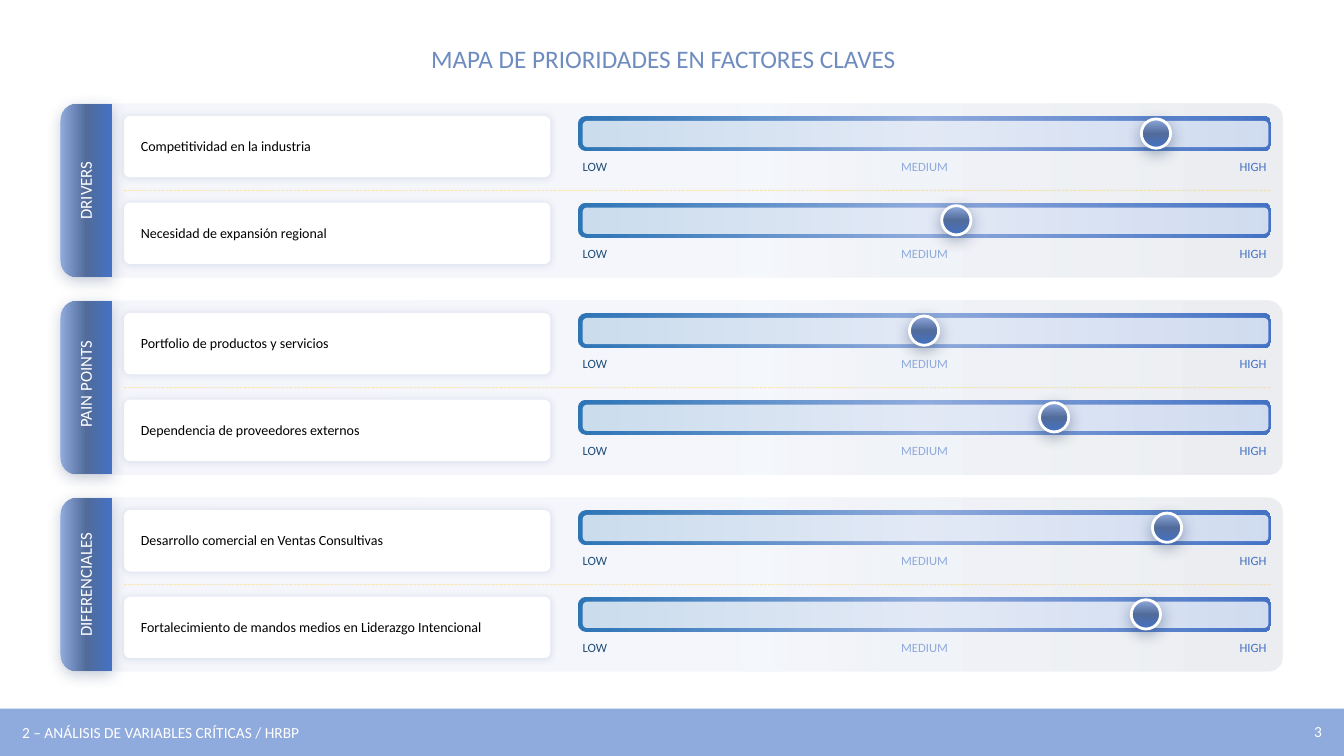
"""Build the slide that maps the priority of key business factors."""
from dataclasses import dataclass
from typing import Any, NamedTuple

from lxml.etree import SubElement
from pptx import Presentation
from pptx.dml.color import RGBColor
from pptx.enum.dml import MSO_LINE
from pptx.enum.shapes import MSO_CONNECTOR, MSO_SHAPE
from pptx.enum.text import MSO_ANCHOR, MSO_AUTO_SIZE, PP_ALIGN
from pptx.oxml.ns import qn
from pptx.util import Inches, Pt

RECT, ROUND = MSO_SHAPE.RECTANGLE, MSO_SHAPE.ROUNDED_RECTANGLE
TAB, OVAL = MSO_SHAPE.ROUND_2_SAME_RECTANGLE, MSO_SHAPE.OVAL
STRAIGHT, DASH = MSO_CONNECTOR.STRAIGHT, MSO_LINE.SQUARE_DOT
LEFT, CENTER, RIGHT = PP_ALIGN.LEFT, PP_ALIGN.CENTER, PP_ALIGN.RIGHT
TOP, MIDDLE = MSO_ANCHOR.TOP, MSO_ANCHOR.MIDDLE
GROW, FIXED = MSO_AUTO_SIZE.SHAPE_TO_FIT_TEXT, MSO_AUTO_SIZE.NONE

WHITE, BLACK = RGBColor(255, 255, 255), RGBColor(0, 0, 0)
SKY, BLUE = RGBColor(0x8F, 0xAA, 0xDC), RGBColor(0x44, 0x72, 0xC4)
STEEL, OCEAN = RGBColor(0x51, 0x6B, 0x9A), RGBColor(0x2E, 0x75, 0xB6)
SLATE, AMBER = RGBColor(0x44, 0x54, 0x6A), RGBColor(0xFF, 0xC0, 0x00)
DEEP, NAVY = RGBColor(0x1F, 0x4E, 0x79), RGBColor(0x20, 0x38, 0x64)
ROYAL = RGBColor(0x2F, 0x55, 0x97)
TITLE_LIGHT, TITLE_DARK = RGBColor(0x6F, 0x8C, 0xC0), RGBColor(0x32, 0x49, 0x73)


class Box(NamedTuple):
    left: float
    top: float
    width: float
    height: float


class Stop(NamedTuple):
    pos: int
    color: RGBColor
    alpha: int = 100


class Shadow(NamedTuple):
    color: RGBColor
    alpha: int
    blur: int
    dist: int
    angle: int


class Gradient(NamedTuple):
    stops: tuple[Stop, ...]
    angle: int


class Mark(NamedTuple):
    text: str
    left: float
    width: float
    align: PP_ALIGN
    color: RGBColor


@dataclass
class Factor:
    text: str
    knob_left: float


@dataclass
class Panel:
    name: str
    name_width: float
    name_y: float
    factors: tuple[Factor, ...]


PANELS = (
    Panel("DRIVERS", 1.01, 1.89, (Factor("Competitividad en la industria", 11.32),
                                  Factor("Necesidad de expansión regional", 9.34))),
    Panel("PAIN POINTS", 1.66, 3.81, (Factor("Portfolio de productos y servicios", 9.02),
                                      Factor("Dependencia de proveedores externos", 10.31))),
    Panel("DIFERENCIALES", 1.72, 5.8, (
        Factor("Desarrollo comercial en Ventas Consultivas", 11.43),
        Factor("Fortalecimiento de mandos medios en Liderazgo Intencional", 11.22))),
)
MARKS = (Mark("LOW", 5.73, 0.57, LEFT, DEEP), Mark("HIGH", 12.04, 0.57, RIGHT, BLUE),
         Mark("MEDIUM", 8.8, 0.74, CENTER, SKY))
PANEL_TOP, PANEL_STEP, PANEL_H, ROW_STEP = 1.03, 1.955, 1.72, 0.86
PANEL_FILL = Gradient((Stop(53, BLUE, 5), Stop(99, SLATE, 10)), 90)
METAL = Gradient((Stop(0, SKY), Stop(50, STEEL), Stop(100, BLUE)), 90)
BAR_FILL = Gradient((Stop(0, OCEAN), Stop(50, SKY), Stop(100, BLUE)), 0)
TITLE_FILL = Gradient((Stop(0, TITLE_LIGHT), Stop(100, TITLE_DARK)), 90)
CARD_SHADOW = Shadow(ROYAL, 15, 5, 0, 0)
KNOB_SHADOW, TAB_SHADOW = Shadow(NAVY, 40, 11, 3, 90), Shadow(NAVY, 25, 11, 3, 90)


def set_all(obj: Any, fmt: dict[str, Any]) -> None:
    for name, value in fmt.items():
        setattr(obj, name, value)


def add_color(parent: Any, color: RGBColor, alpha: int) -> None:
    clr = SubElement(parent, qn("a:srgbClr"), val=str(color))
    if alpha < 100:
        SubElement(clr, qn("a:alpha"), val=str(alpha * 1000))


def set_alpha(sp: Any, alpha: int) -> None:
    clr = next(sp._element.spPr.iter(qn("a:srgbClr")))
    SubElement(clr, qn("a:alpha"), val=str(alpha * 1000))


def paint(fill: Any, element: Any, look: RGBColor | Gradient) -> None:
    if isinstance(look, RGBColor):
        fill.solid()
        fill.fore_color.rgb = look
        return
    fill.gradient()
    fill.gradient_angle = -look.angle % 360
    stops = next(element.iter(qn("a:gsLst")))
    for old in list(stops):
        stops.remove(old)
    for stop in look.stops:
        gs = SubElement(stops, qn("a:gs"), pos=str(stop.pos * 1000))
        add_color(gs, stop.color, stop.alpha)


def turned(box: Box) -> Box:
    shift = (box.width - box.height) / 2
    return Box(box.left + shift, box.top - shift, box.height, box.width)


def add_shape(s: Any, kind: MSO_SHAPE, box: Box, look: RGBColor | Gradient,
              adj: tuple[float, ...] = (), rotation: int = 0,
              shadow: Shadow | None = None) -> Any:
    frame = turned(box) if rotation else box
    sp = s.shapes.add_shape(kind, *map(Inches, frame))
    sp.rotation = rotation
    for i, value in enumerate(adj):
        sp.adjustments[i] = value
    paint(sp.fill, sp._element.spPr, look)
    sp.line.fill.background()
    sp.shadow.inherit = False
    if shadow:
        effects = sp._element.spPr.find(qn("a:effectLst"))
        outer = SubElement(effects, qn("a:outerShdw"), blurRad=str(Pt(shadow.blur)),
                           dist=str(Pt(shadow.dist)), dir=str(shadow.angle * 60000),
                           algn="ctr", rotWithShape="0")
        add_color(outer, shadow.color, shadow.alpha)
    return sp


def add_text(sp: Any, text: str, size: int, look: RGBColor | Gradient,
             align: PP_ALIGN = LEFT, anchor: MSO_ANCHOR = TOP,
             insets: tuple[float, ...] = (0.1, 0.05, 0.1, 0.05),
             fit: MSO_AUTO_SIZE = FIXED, wrap: bool = True,
             spacing: dict[str, Any] | None = None) -> None:
    tf = sp.text_frame
    sides = ("margin_left", "margin_top", "margin_right", "margin_bottom")
    set_all(tf, {"word_wrap": wrap, "auto_size": fit, "vertical_anchor": anchor,
                 **dict(zip(sides, map(Inches, insets)))})
    p = tf.paragraphs[0]
    set_all(p, {"alignment": align, **(spacing or {})})
    r = p.add_run()
    r.text = text
    set_all(r.font, {"name": "Calibri", "size": Pt(size)})
    paint(r.font.fill, r._r, look)


def add_box(s: Any, box: Box) -> Any:
    return s.shapes.add_textbox(*map(Inches, box))


def add_factor(s: Any, factor: Factor, top: float) -> None:
    sp = add_shape(s, ROUND, Box(1.23, top, 4.23, 0.61), WHITE, (0.1,), shadow=CARD_SHADOW)
    add_text(sp, factor.text, 10, BLACK, anchor=MIDDLE, insets=(0.15, 0, 0.1, 0.04),
             spacing={"line_spacing": Pt(14)})
    add_shape(s, ROUND, Box(5.73, top, 6.88, 0.35), BAR_FILL, (0.24,))
    sp = add_shape(s, ROUND, Box(5.78, top + 0.05, 6.8, 0.26), WHITE, (0.16,))
    set_alpha(sp, 75)
    for mark in MARKS:
        sp = add_box(s, Box(mark.left, top + 0.38, mark.width, 0.23))
        add_text(sp, mark.text, 9, mark.color, mark.align,
                 insets=(0.05, 0.05, 0.05, 0.03), fit=GROW)
    sp = add_shape(s, OVAL, Box(factor.knob_left, top + 0.03, 0.29, 0.29), METAL,
                   shadow=KNOB_SHADOW)
    set_all(sp.line, {"width": Pt(2)})
    sp.line.color.rgb = WHITE


def add_panel(s: Any, panel: Panel, top: float) -> None:
    add_shape(s, ROUND, Box(0.6, top, 12.12, PANEL_H), PANEL_FILL, (0.09,), 270)
    y = Inches(top + PANEL_H / 2)
    cn = s.shapes.add_connector(STRAIGHT, Inches(1.23), y, Inches(12.61), y)
    cn.line.color.rgb = AMBER
    set_all(cn.line, {"width": Pt(0.75), "dash_style": DASH})
    set_alpha(cn, 25)
    SubElement(cn._element.spPr, qn("a:effectLst"))
    for i, factor in enumerate(panel.factors):
        add_factor(s, factor, top + 0.12 + i * ROW_STEP)
    add_shape(s, TAB, Box(0.6, top, 0.51, PANEL_H), METAL, (0.33, 0), 270, TAB_SHADOW)
    width = panel.name_width
    sp = add_box(s, turned(Box(0.67, panel.name_y - width / 2, 0.38, width)))
    sp.rotation = 270
    add_text(sp, panel.name, 12, WHITE, CENTER, MIDDLE, (0.1, 0.05, 0.1, 0.08))


def main() -> None:
    prs = Presentation()
    set_all(prs, {"slide_width": Inches(13.33), "slide_height": Inches(7.5)})
    s = prs.slides.add_slide(prs.slide_layouts[6])
    add_text(add_box(s, Box(3.36, 0.38, 6.44, 0.4)), "MAPA DE PRIORIDADES EN FACTORES CLAVES",
             18, TITLE_FILL, CENTER, fit=GROW, spacing={"space_after": Pt(6)})
    for i, panel in enumerate(PANELS):
        add_panel(s, panel, PANEL_TOP + i * PANEL_STEP)
    add_shape(s, RECT, Box(0, 7.03, 13.33, 0.47), SKY)
    sp = add_shape(s, RECT, Box(0.12, 7.12, 3.12, 0.29), SKY)
    add_text(sp, "2 – ANÁLISIS DE VARIABLES CRÍTICAS / HRBP", 11, WHITE, fit=GROW, wrap=False)
    sp = add_shape(s, RECT, Box(12.08, 7.06, 1.13, 0.4), SKY)
    add_text(sp, "3", 11, WHITE, RIGHT, MIDDLE)
    prs.save("out.pptx")


if __name__ == "__main__":
    main()
